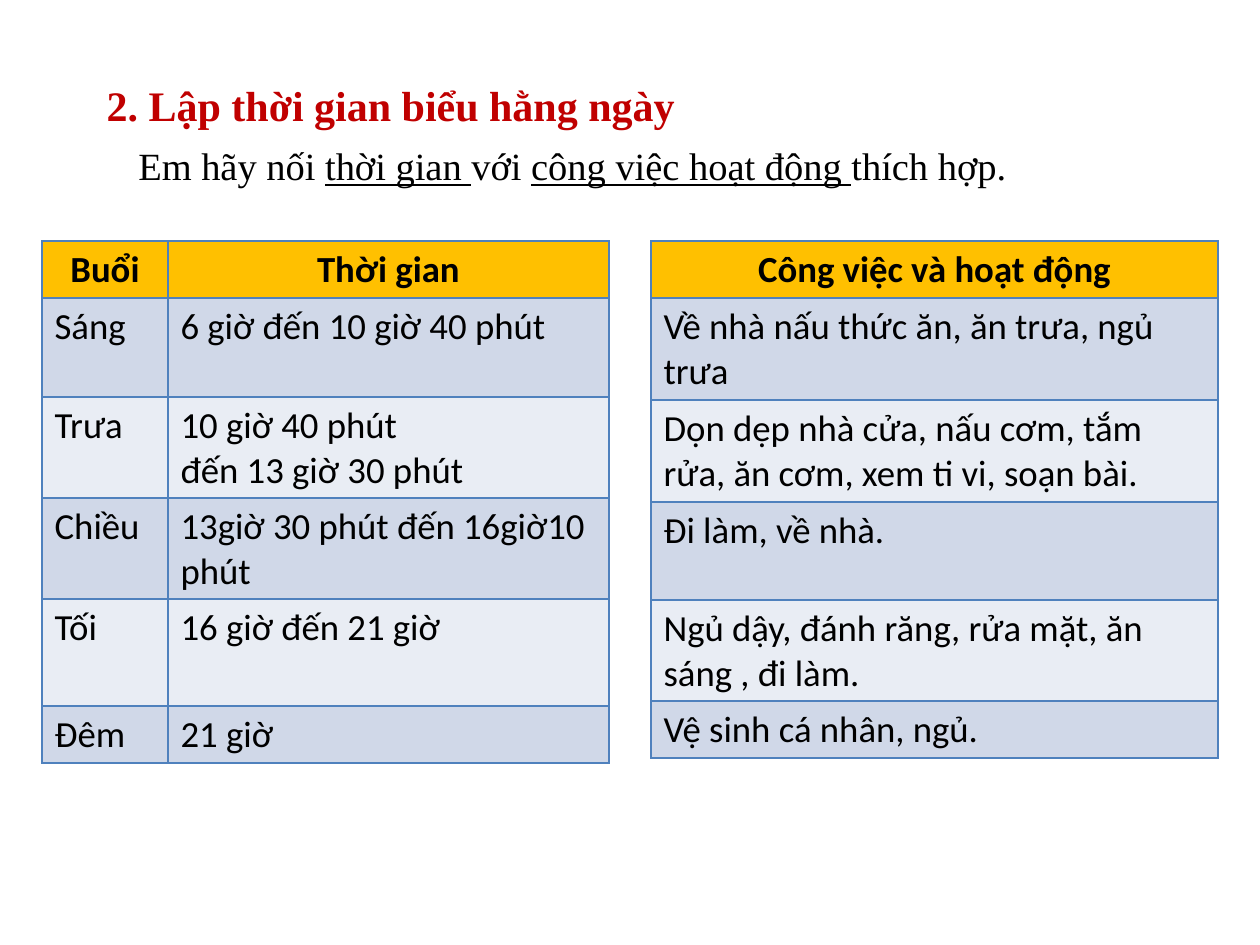
from lxml import etree
from pptx import Presentation
from pptx import util as u
from pptx.dml.color import RGBColor
from pptx.enum import text
from pptx.oxml import ns

PX = u.Inches(1) // 126
RED = RGBColor(0xC0, 0x00, 0x00)
BLACK = RGBColor(0x00, 0x00, 0x00)
GOLD = RGBColor(0xFF, 0xC0, 0x00)
BANDS = [RGBColor(0xE9, 0xED, 0xF4), RGBColor(0xD0, 0xD8, 0xE8)]
BORDER = RGBColor(0x4F, 0x81, 0xBD)
SERIF, SANS = "Times New Roman", "Calibri"

HEADING = "2. Lập thời gian biểu hằng ngày"
INSTRUCTION = [
    ("Em hãy nối ", False),
    ("thời gian ", True),
    ("với ", False),
    ("công việc hoạt động ", True),
    ("thích hợp.", False),
]
TABLE_TOP = 241
TABLES = [
    {
        "left": 42,
        "columns": [126, 441],
        "heights": [57, 99, 101, 101, 107, 57],
        "rows": [
            ["Buổi", "Thời gian"],
            ["Sáng", "6 giờ đến 10 giờ 40 phút"],
            ["Trưa", "10 giờ 40 phút\nđến 13 giờ 30 phút"],
            ["Chiều", "13giờ 30 phút đến 16giờ10 phút"],
            ["Tối", "16 giờ đến 21 giờ"],
            ["Đêm", "21 giờ"],
        ],
    },
    {
        "left": 651,
        "columns": [567],
        "heights": [57, 102, 102, 98, 101, 57],
        "rows": [
            ["Công việc và hoạt động"],
            ["Về nhà nấu thức ăn, ăn trưa, ngủ trưa"],
            ["Dọn dẹp nhà cửa, nấu cơm, tắm rửa, ăn cơm, xem ti vi, soạn bài."],
            ["Đi làm, về nhà."],
            ["Ngủ dậy, đánh răng, rửa mặt, ăn sáng , đi làm."],
            ["Vệ sinh cá nhân, ngủ."],
        ],
    },
]


def box(left, top, width, height):
    return [length * PX for length in (left, top, width, height)]


def style(paragraph, name, size, color, bold=False):
    font = paragraph.font
    font.name, font.size, font.bold = name, u.Pt(size), bold
    font.color.rgb = color


def add_borders(cell):
    properties = cell._tc.get_or_add_tcPr()
    for side in ("a:lnL", "a:lnR", "a:lnT", "a:lnB"):
        line = etree.SubElement(properties, ns.qn(side), w=str(u.Pt(1)))
        fill = etree.SubElement(line, ns.qn("a:solidFill"))
        etree.SubElement(fill, ns.qn("a:srgbClr"), val=str(BORDER))


def add_heading(slide):
    title = slide.shapes.title
    title.left, title.top, title.width, title.height = box(94, 73, 630, 63)
    frame = title.text_frame
    frame.text = HEADING
    frame.auto_size = text.MSO_AUTO_SIZE.NONE
    frame.vertical_anchor = text.MSO_ANCHOR.TOP
    paragraph = frame.paragraphs[0]
    paragraph.alignment = text.PP_ALIGN.LEFT
    style(paragraph, SERIF, 24, RED, True)


def add_instruction(slide):
    frame = slide.shapes.add_textbox(*box(126, 136, 998, 59)).text_frame
    frame.word_wrap = True
    paragraph = frame.paragraphs[0]
    style(paragraph, SERIF, 22, BLACK)
    for words, underlined in INSTRUCTION:
        run = paragraph.add_run()
        run.text = words
        run.font.underline = underlined


def add_schedule(slide, left, columns, heights, rows):
    area = box(left, TABLE_TOP, sum(columns), sum(heights))
    table = slide.shapes.add_table(len(rows), len(columns), *area).table
    for column, width in zip(table.columns, columns):
        column.width = width * PX
    for row, height in zip(table.rows, heights):
        row.height = height * PX
    for row_number, row in enumerate(rows):
        header = row_number == 0
        for column_number, words in enumerate(row):
            cell = table.cell(row_number, column_number)
            cell.text = words
            add_borders(cell)
            cell.fill.solid()
            cell.fill.fore_color.rgb = GOLD if header else BANDS[row_number % 2]
            for paragraph in cell.text_frame.paragraphs:
                style(paragraph, SANS, 21, BLACK, header)
                if header:
                    paragraph.alignment = text.PP_ALIGN.CENTER


def main():
    presentation = Presentation()
    presentation.slide_width = u.Inches(10)
    presentation.slide_height = u.Inches(7.5)
    slide = presentation.slides.add_slide(presentation.slide_layouts[5])
    add_heading(slide)
    add_instruction(slide)
    for schedule in TABLES:
        add_schedule(slide, **schedule)
    presentation.save("out.pptx")


if __name__ == "__main__":
    main()
